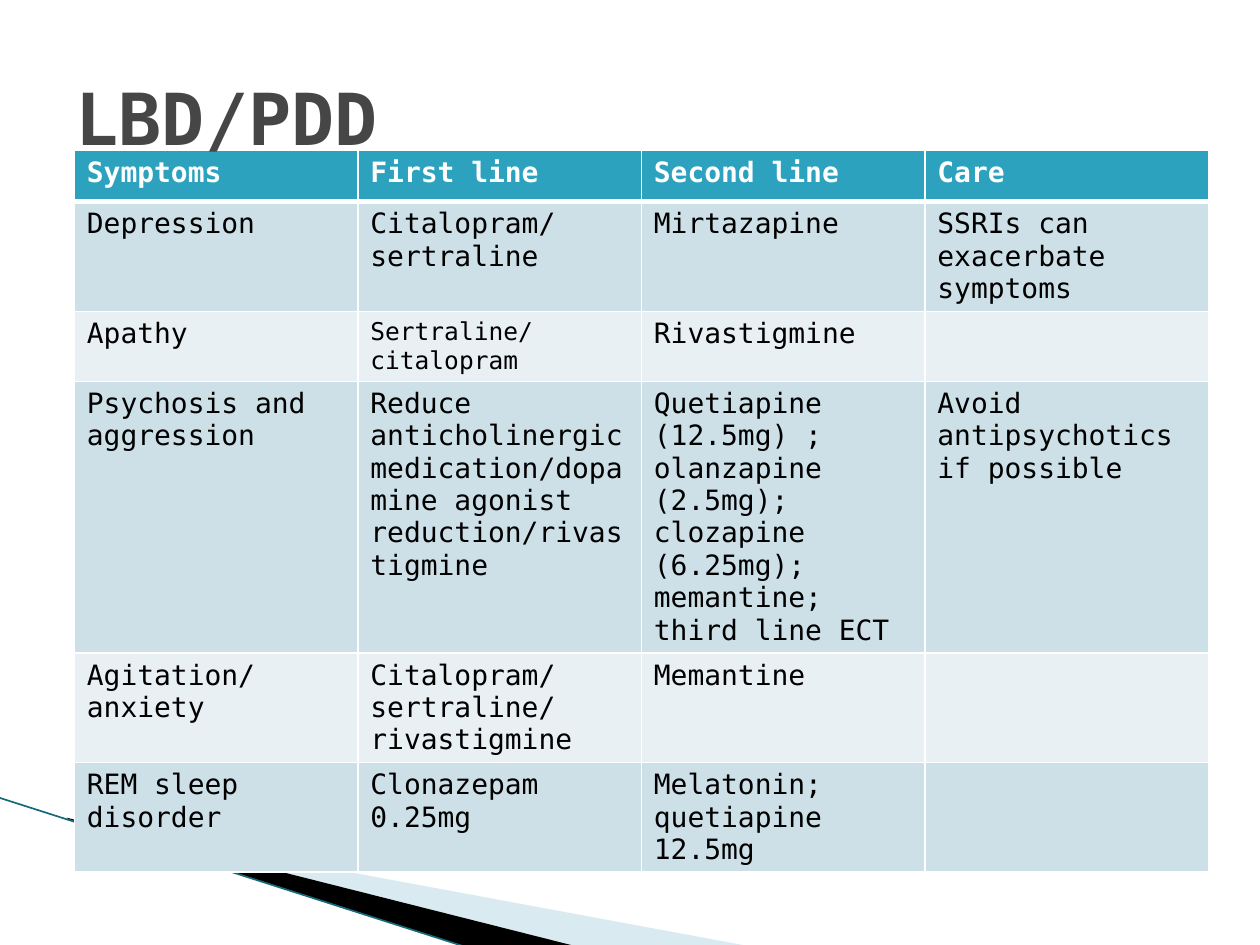
from lxml.etree import SubElement
from pptx import Presentation
from pptx.dml.color import RGBColor
from pptx.enum.shapes import MSO_CONNECTOR
from pptx.enum.text import MSO_ANCHOR, PP_ALIGN
from pptx.oxml.ns import qn
from pptx.util import Inches, Pt

FONT = "DejaVu Sans Mono"
WHITE, BLACK = "FFFFFF", "000000"
HEADER_FILL = "2DA2BF"
BAND_FILLS = ("CDE0E8", "E8F0F4")
ROWS = [
    ("Symptoms", "First line", "Second line", "Care"),
    ("Depression", "Citalopram/sertraline", "Mirtazapine",
     "SSRIs can exacerbate symptoms"),
    ("Apathy", "Sertraline/citalopram", "Rivastigmine", ""),
    ("Psychosis and aggression",
     "Reduce anticholinergic medication/dopamine agonist reduction/rivastigmine",
     "Quetiapine (12.5mg) ; olanzapine (2.5mg); clozapine (6.25mg); "
     "memantine; third line ECT",
     "Avoid antipsychotics if possible"),
    ("Agitation/anxiety", "Citalopram/sertraline/rivastigmine", "Memantine", ""),
    ("REM sleep disorder", "Clonazepam 0.25mg", "Melatonin; quetiapine 12.5mg", ""),
]
SMALLER_CELL = (2, 1)


def rgb(color):
    return RGBColor.from_string(color)


def write_text(text_frame, text, size=16, color=BLACK, bold=False):
    paragraph = text_frame.paragraphs[0]
    paragraph.alignment = PP_ALIGN.LEFT
    paragraph.font.size = Pt(size)
    if text:
        run = paragraph.add_run()
        run.text = text
        run.font.name = FONT
        run.font.size = Pt(size)
        run.font.bold = bold
        run.font.color.rgb = rgb(color)


def add_wedge(slide, points, color, opacity=100):
    corners = [(Inches(x), Inches(y)) for x, y in points]
    builder = slide.shapes.build_freeform(*corners[0])
    builder.add_line_segments(corners[1:], close=True)
    shape = builder.convert_to_shape()
    shape.shadow.inherit = False
    shape.line.fill.background()
    shape.fill.solid()
    shape.fill.fore_color.rgb = rgb(color)
    if opacity < 100:
        color_element = shape.fill._xPr.find(qn("a:solidFill"))[0]
        SubElement(color_element, qn("a:alpha"), val=str(opacity * 1000))


def add_line(slide, start, end, color, width):
    connector = slide.shapes.add_connector(
        MSO_CONNECTOR.STRAIGHT, *(Inches(value) for value in start + end))
    connector.line.color.rgb = rgb(color)
    connector.line.width = Pt(width)
    SubElement(connector._element.spPr, qn("a:effectLst"))


def set_borders(cell, bottom_width):
    """Draw white cell borders; they must precede the fill in the XML."""
    properties = cell._tc.get_or_add_tcPr()
    for side, width in (("L", 1), ("R", 1), ("T", 1), ("B", bottom_width)):
        border = SubElement(properties, qn(f"a:ln{side}"), w=str(Pt(width)))
        fill = SubElement(border, qn("a:solidFill"))
        SubElement(fill, qn("a:srgbClr"), val=WHITE)


def add_treatment_table(slide):
    frame = slide.shapes.add_table(
        len(ROWS), len(ROWS[0]), Inches(0.59), Inches(1.19),
        Inches(9), Inches(0.41 * len(ROWS)))
    table = frame.table
    for row_index, row in enumerate(ROWS):
        is_header = row_index == 0
        fill = HEADER_FILL if is_header else BAND_FILLS[(row_index - 1) % 2]
        for column_index, text in enumerate(row):
            cell = table.cell(row_index, column_index)
            set_borders(cell, bottom_width=3 if is_header else 1)
            cell.fill.solid()
            cell.fill.fore_color.rgb = rgb(fill)
            write_text(cell.text_frame, text,
                       size=14 if (row_index, column_index) == SMALLER_CELL else 16,
                       color=WHITE if is_header else BLACK, bold=is_header)


def add_title(slide, text):
    """Fill the title placeholder and bring it in front of the table."""
    title = slide.shapes.title
    title.left, title.top = Inches(0.5), Inches(0.3)
    title.width, title.height = Inches(9), Inches(1.25)
    title.text_frame.vertical_anchor = MSO_ANCHOR.MIDDLE
    write_text(title.text_frame, text, size=41, color="464646", bold=True)
    slide.shapes._spTree.append(title._element)


def main():
    presentation = Presentation()
    presentation.slide_width = Inches(10)
    presentation.slide_height = Inches(7.5)
    slide = presentation.slides.add_slide(presentation.slide_layouts[5])
    add_wedge(slide, [(0.55, 6.51), (5.95, 7.51), (4.56, 7.51), (0.55, 6.5)],
              "A0CBDC", opacity=40)
    add_wedge(slide, [(0.53, 6.49), (4.57, 7.51), (3.72, 7.52), (0.54, 6.5)], BLACK)
    add_line(slide, (-0.01, 6.33), (3.71, 7.52), "16697A", 0.95)
    add_treatment_table(slide)
    add_title(slide, "LBD/PDD")
    presentation.save("out.pptx")


if __name__ == "__main__":
    main()
